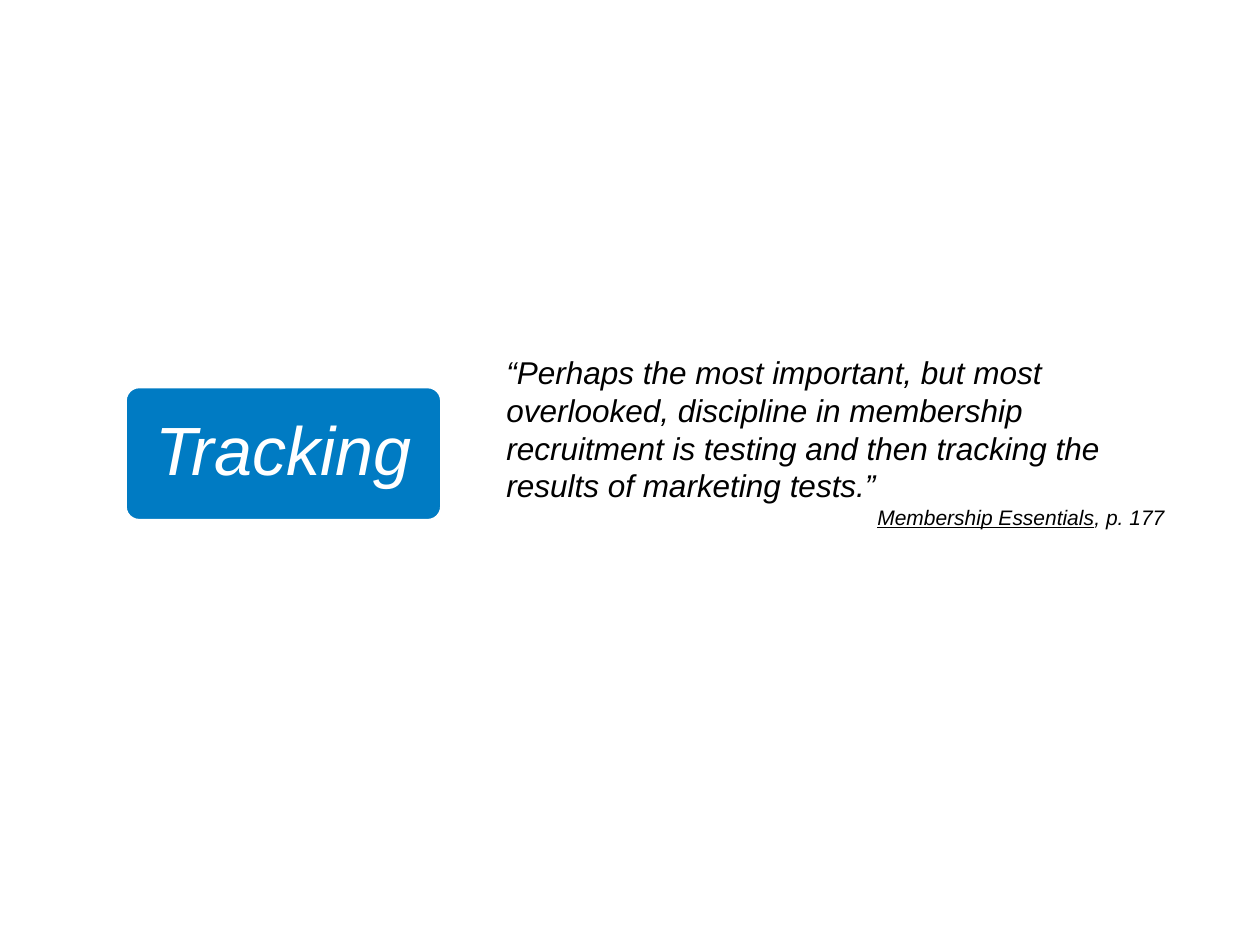
from typing import NamedTuple

from pptx import Presentation
from pptx.dml.color import RGBColor
from pptx.enum.shapes import MSO_SHAPE
from pptx.enum.text import MSO_ANCHOR, MSO_AUTO_SIZE, PP_ALIGN
from pptx.util import Inches, Pt

ROUNDED = MSO_SHAPE.ROUNDED_RECTANGLE
MIDDLE = MSO_ANCHOR.MIDDLE
GROW = MSO_AUTO_SIZE.SHAPE_TO_FIT_TEXT
LEFT, CENTER, RIGHT = PP_ALIGN.LEFT, PP_ALIGN.CENTER, PP_ALIGN.RIGHT

WIDTH, HEIGHT = Inches(10), Inches(7.5)
COLORS = {"blue": "007BC3", "white": "FFFFFF", "black": "000000"}


class Area(NamedTuple):
    """A rectangle in shares of the slide's width and height."""
    left: float
    top: float
    width: float
    height: float

    def lengths(self) -> list[int]:
        return [round(share * side)
                for share, side in zip(self, (WIDTH, HEIGHT) * 2)]


class Span(NamedTuple):
    text: str
    size: float
    color: str = "black"
    underline: bool = False


class Line(NamedTuple):
    spans: list[Span]
    align: PP_ALIGN = LEFT
    spacing: float = 1.0


LABEL_AREA = Area(0.1, 0.41, 0.25, 0.14)
QUOTE_AREA = Area(0.392, 0.367, 0.542, 0.201)

LABEL = [Line([Span("Tracking", 39, "white")], CENTER, 0.9)]
QUOTE = [
    Line([Span("“Perhaps the most important, but most overlooked, discipline in "
               "membership recruitment is testing and then tracking the results "
               "of marketing tests.”", 18)]),
    Line([Span("Membership Essentials", 12, underline=True),
          Span(", p. 177", 12)], RIGHT),
]


def rgb(name: str) -> RGBColor:
    return RGBColor.from_string(COLORS[name])


def write(frame, lines: list[Line], **frame_format) -> None:
    for name, value in {"word_wrap": True, **frame_format}.items():
        setattr(frame, name, value)
    for index, line in enumerate(lines):
        para = frame.add_paragraph() if index else frame.paragraphs[0]
        para.alignment, para.line_spacing = line.align, line.spacing
        for span in line.spans:
            run = para.add_run()
            run.text = span.text
            font_format = {"name": "Arial", "size": Pt(span.size),
                           "italic": True, "underline": span.underline}
            for name, value in font_format.items():
                setattr(run.font, name, value)
            run.font.color.rgb = rgb(span.color)


def draw_label(page, area: Area, lines: list[Line]) -> None:
    box = page.shapes.add_shape(ROUNDED, *area.lengths())
    box.adjustments[0] = 0.1
    box.shadow.inherit = False
    box.fill.solid()
    box.fill.fore_color.rgb = rgb("blue")
    box.line.color.rgb = rgb("white")
    box.line.width = Pt(1)
    margins = {f"margin_{side}": Inches(0.16)
               for side in ("left", "top", "right", "bottom")}
    write(box.text_frame, lines, vertical_anchor=MIDDLE, **margins)


def draw_quote(page, area: Area, lines: list[Line]) -> None:
    box = page.shapes.add_textbox(*area.lengths())
    write(box.text_frame, lines, auto_size=GROW)


def main() -> None:
    deck = Presentation()
    deck.slide_width, deck.slide_height = WIDTH, HEIGHT
    page = deck.slides.add_slide(deck.slide_layouts[6])
    # Topic label on the left
    draw_label(page, LABEL_AREA, LABEL)
    # Quotation and its source on the right
    draw_quote(page, QUOTE_AREA, QUOTE)
    deck.save("out.pptx")


if __name__ == "__main__":
    main()
